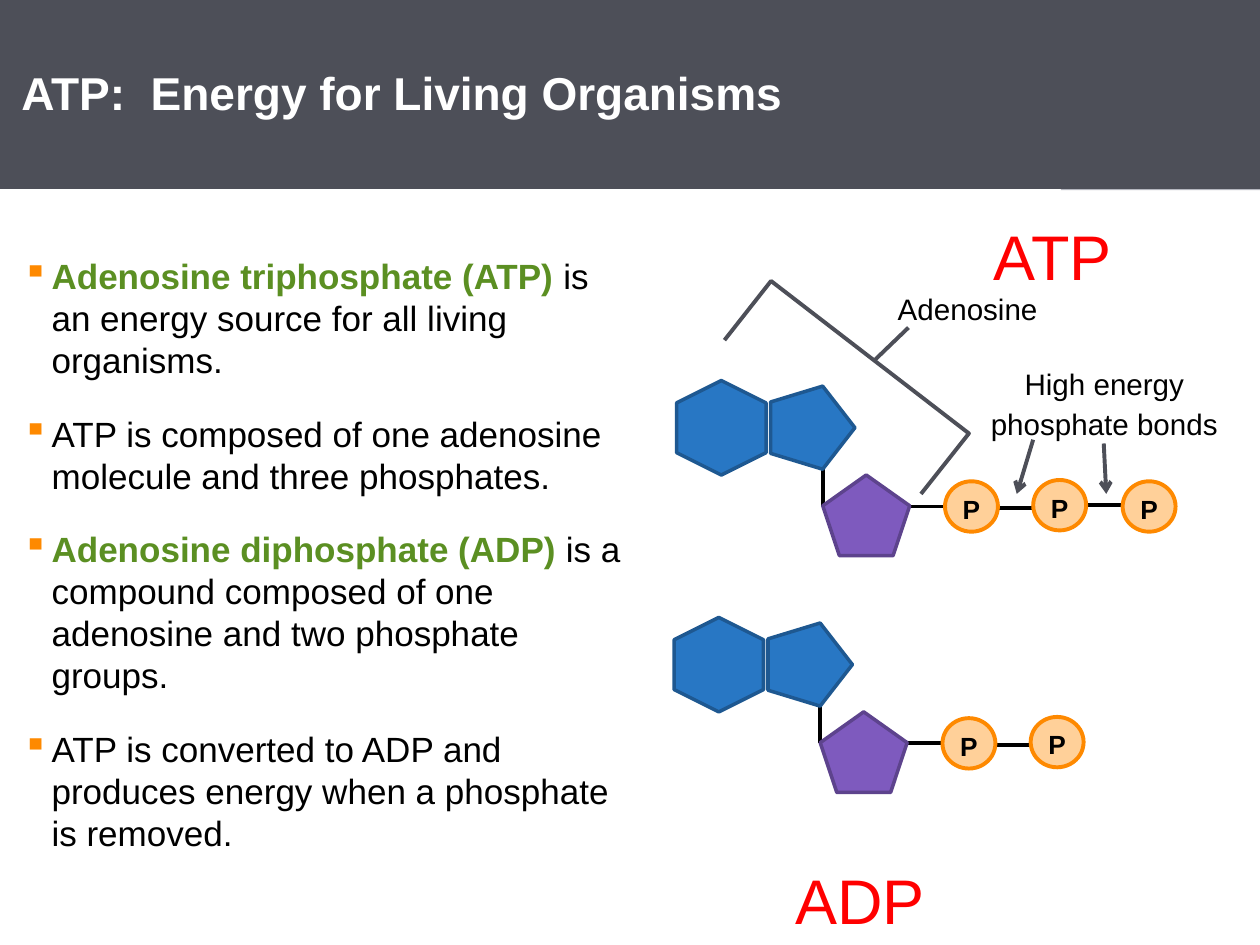
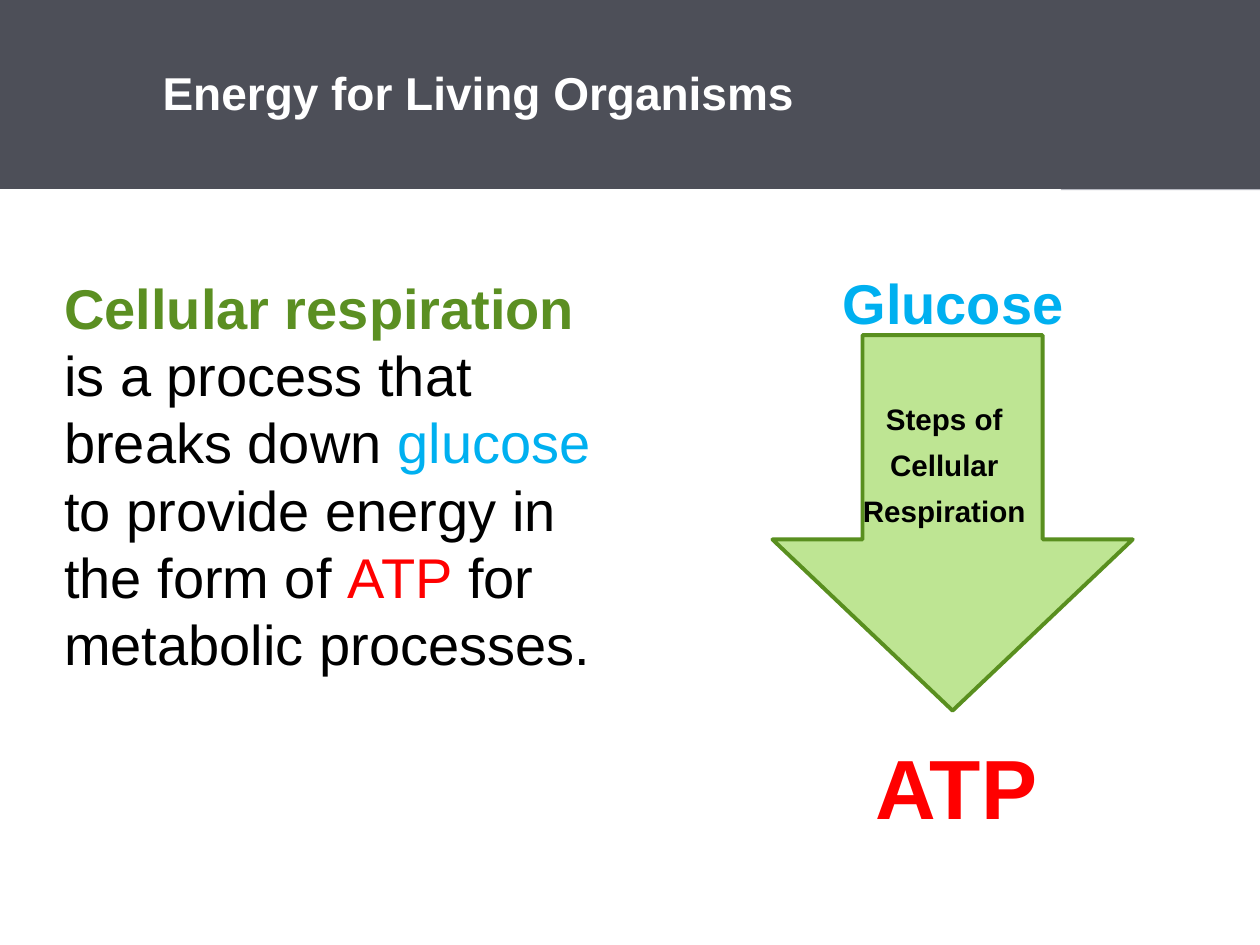
from dataclasses import dataclass

from lxml import etree
from pptx import Presentation, util as u
from pptx.dml.color import RGBColor
from pptx.enum import shapes, text
from pptx.oxml.ns import qn


@dataclass(frozen=True)
class Theme:
    font: str = "Arial"
    slate: str = "4D4F58"
    silver: str = "B5B7BF"
    white: str = "FFFFFF"
    black: str = "000000"
    green: str = "5B8F22"
    red: str = "FF0000"
    sky: str = "00B0F0"
    orange: str = "FE8900"
    peach: str = "FFD099"
    blue: str = "2877C4"
    navy: str = "1E5891"
    purple: str = "7E5ABE"
    plum: str = "5D438D"
    lime: str = "BEE593"
    leaf: str = "598F1F"
    title: float = 26.3
    body: float = 20
    label: float = 16.9
    phosphate: float = 15
    heading: float = 36
    large: float = 32
    huge: float = 48
    line: float = 2.25
    ring_line: float = 2


theme = Theme()
kinds = shapes.MSO_SHAPE
CENTER = text.PP_ALIGN.CENTER
MIDDLE = text.MSO_ANCHOR.MIDDLE


def write(shape, paragraphs, *, size, colour=theme.black, bold=False, align=text.PP_ALIGN.LEFT,
          anchor=text.MSO_ANCHOR.TOP, insets=(0, 0, 0, 0), wrap=True, spacing=None,
          before=0, bullet=None):
    """Fill a shape; a paragraph is a string or a list of (text, colour, bold) spans."""
    frame = shape.text_frame
    frame.word_wrap = wrap
    frame.vertical_anchor = anchor
    (frame.margin_left, frame.margin_top,
     frame.margin_right, frame.margin_bottom) = map(u.Inches, insets)
    for index, content in enumerate(paragraphs):
        para = frame.add_paragraph() if index else frame.paragraphs[0]
        para.alignment = align
        para.space_before = u.Pt(before)
        if spacing:
            para.line_spacing = spacing
        if bullet:
            properties = para._p.get_or_add_pPr()
            hang = u.Inches(0.23)
            properties.set("marL", str(hang))
            properties.set("indent", str(-hang))
            tint = etree.SubElement(properties, qn("a:buClr"))
            etree.SubElement(tint, qn("a:srgbClr"), val=theme.orange)
            etree.SubElement(properties, qn("a:buChar"), char=bullet)
        spans = [(content, colour, bold)] if isinstance(content, str) else content
        for words, span_colour, span_bold in spans:
            span = para.add_run()
            span.text = words
            span.font.name = theme.font
            span.font.size = u.Pt(size)
            span.font.bold = span_bold
            span.font.color.rgb = RGBColor.from_string(span_colour)


def draw(page, kind, at, *, fill=None, line=None, width=theme.line, rotation=0, arrow=False):
    """Add a preset shape at (left, top, width, height), or a line (kind None) from x, y to x, y."""
    places = [u.Inches(value) for value in at]
    if kind is None:
        shape = page.shapes.add_connector(shapes.MSO_CONNECTOR.STRAIGHT, *places)
        etree.SubElement(shape._element.spPr, qn("a:effectLst"))
    else:
        shape = page.shapes.add_shape(kind, *places)
        shape.shadow.inherit = False
        shape.rotation = rotation
        shape.fill.solid()
        shape.fill.fore_color.rgb = RGBColor.from_string(fill)
    if line:
        shape.line.color.rgb = RGBColor.from_string(line)
        shape.line.width = u.Pt(width)
    else:
        shape.line.fill.background()
    if arrow:
        etree.SubElement(shape.line._get_or_add_ln(), qn("a:tailEnd"), type="arrow")
    return shape


deck = Presentation()
deck.slide_width, deck.slide_height = u.Inches(10), u.Inches(7.5)

# Shared title band
pages = []
for title, title_left in [("ATP:  Energy for Living Organisms", 0.17),
                          ("Energy for Living Organisms", 1.29)]:
    page = deck.slides.add_slide(deck.slide_layouts[6])
    draw(page, kinds.RECTANGLE, (8.42, 0, 1.58, 1.51), fill=theme.silver)
    band = draw(page, kinds.RECTANGLE, (0, 0, 10, 1.5), fill=theme.slate)
    write(band, [title], size=theme.title, colour=theme.white, bold=True, anchor=MIDDLE,
          insets=(title_left, 0.07, 0.17, 0.07), spacing=0.95)
    pages.append(page)
molecules_page, respiration_page = pages

# Slide 1: facts on the left
facts = [
    [("Adenosine triphosphate (ATP) ", theme.green, True),
     ("is an energy source for all living organisms.", theme.black, False)],
    "ATP is composed of one adenosine molecule and three phosphates.",
    [("Adenosine diphosphate (ADP) ", theme.green, True),
     ("is a compound composed of one adenosine and two phosphate groups.", theme.black, False)],
    "ATP is converted to ADP and produces energy when a phosphate is removed.",
]
body_insets = (0.18, 0.1, 0, 0.1)
box = molecules_page.shapes.add_textbox(*map(u.Inches, (0, 1.92, 5, 5.33)))
write(box, facts, size=theme.body, insets=body_insets, before=18, bullet="▪")

# Slide 1: ATP above, ADP below with one phosphate fewer
rings = [
    (kinds.HEXAGON, (5.35, 3.04, 0.75, 0.71), 270, theme.blue, theme.navy),
    (kinds.REGULAR_PENTAGON, (6.12, 3.06, 0.66, 0.67), 90, theme.blue, theme.navy),
    (kinds.REGULAR_PENTAGON, (6.53, 3.77, 0.69, 0.64), 0, theme.purple, theme.plum),
]
phosphates = [(7.5, 3.82), (8.2, 3.81), (8.91, 3.82)]
bonds = [(7.21, 4.02, 7.5, 4.02), (7.92, 4.03, 8.2, 4.03), (8.62, 4.01, 8.91, 4.01)]
ring_bond = (6.53, 3.72, 6.53, 4.02)
for shift_x, shift_y, count in [(0, 0, 3), (-0.02, 1.88, 2)]:
    for x1, y1, x2, y2 in [ring_bond] + bonds[:count]:
        draw(molecules_page, None, (x1 + shift_x, y1 + shift_y, x2 + shift_x, y2 + shift_y),
             line=theme.black)
    for kind, (left, top, width, height), rotation, fill, outline in rings:
        draw(molecules_page, kind, (left + shift_x, top + shift_y, width, height),
             fill=fill, line=outline, width=theme.ring_line, rotation=rotation)
    for left, top in phosphates[:count]:
        phosphate = draw(molecules_page, kinds.OVAL, (left + shift_x, top + shift_y, 0.42, 0.4),
                         fill=theme.peach, line=theme.orange)
        write(phosphate, ["P"], size=theme.phosphate, bold=True, align=CENTER,
              anchor=MIDDLE, spacing=1.15, before=3)

# Slide 1: bracket, pointers and labels
outline = molecules_page.shapes.build_freeform(u.Inches(5.75), u.Inches(2.7))
outline.add_line_segments([(u.Inches(x), u.Inches(y))
                           for x, y in [(6.12, 2.23), (7.69, 3.44), (7.31, 3.92)]], close=False)
bracket = outline.convert_to_shape()
bracket.shadow.inherit = False
bracket.fill.background()
bracket.line.color.rgb = RGBColor.from_string(theme.slate)
bracket.line.width = u.Pt(theme.line)
for ends, arrow in [((7.21, 2.6, 6.94, 2.86), False),
                    ((8.2, 3.49, 8.07, 3.92), True),
                    ((8.76, 3.52, 8.78, 3.92), True)]:
    draw(molecules_page, None, ends, line=theme.slate, arrow=arrow)

none, normal = (0, 0, 0, 0), (0.1, 0.05, 0.1, 0.05)
labels = [
    (molecules_page, "Adenosine", (7.12, 2.27, 1.12, 0.33), theme.label, theme.black, False, False, none),
    (molecules_page, "High energy phosphate bonds", (7.72, 2.86, 2.09, 0.65),
     theme.label, theme.black, False, True, none),
    (molecules_page, "ATP", (7.31, 1.64, 2.09, 0.64), theme.heading, theme.red, False, True, none),
    (molecules_page, "ADP", (5.78, 6.75, 2.09, 0.64), theme.heading, theme.red, False, True, none),
    (respiration_page, "Glucose", (6.58, 2, 1.97, 0.67), theme.large, theme.sky, True, False, normal),
    (respiration_page, "ATP", (6.84, 5.67, 1.5, 0.95), theme.huge, theme.red, True, False, normal),
]
for page, words, at, size, colour, bold, wrap, insets in labels:
    box = page.shapes.add_textbox(*map(u.Inches, at))
    write(box, [words], size=size, colour=colour, bold=bold, align=CENTER, insets=insets,
          wrap=wrap, spacing=1.15, before=size * 0.2)

# Slide 2: definition and the arrow from glucose to ATP
definition = [
    ("Cellular respiration ", theme.green, True),
    ("is a process that breaks down ", theme.black, False),
    ("glucose", theme.sky, False),
    (" to provide energy in the form of ", theme.black, False),
    ("ATP", theme.red, False),
    (" for metabolic processes.", theme.black, False),
]
box = respiration_page.shapes.add_textbox(*map(u.Inches, (0.33, 2.07, 4.66, 4.5)))
write(box, [definition], size=theme.large, insets=body_insets, before=9.4)

steps_arrow = draw(respiration_page, kinds.RIGHT_ARROW, (6.07, 2.72, 2.98, 2.86),
                   fill=theme.lime, line=theme.leaf, rotation=90)
steps_arrow.adjustments[0] = 0.5
steps_arrow.adjustments[1] = 0.475
box = respiration_page.shapes.add_textbox(*map(u.Inches, (6.58, 3.13, 1.83, 1.12)))
write(box, ["Steps of", "Cellular", "Respiration"], size=theme.label, bold=True,
      align=CENTER, insets=normal, before=6)

deck.save("out.pptx")
